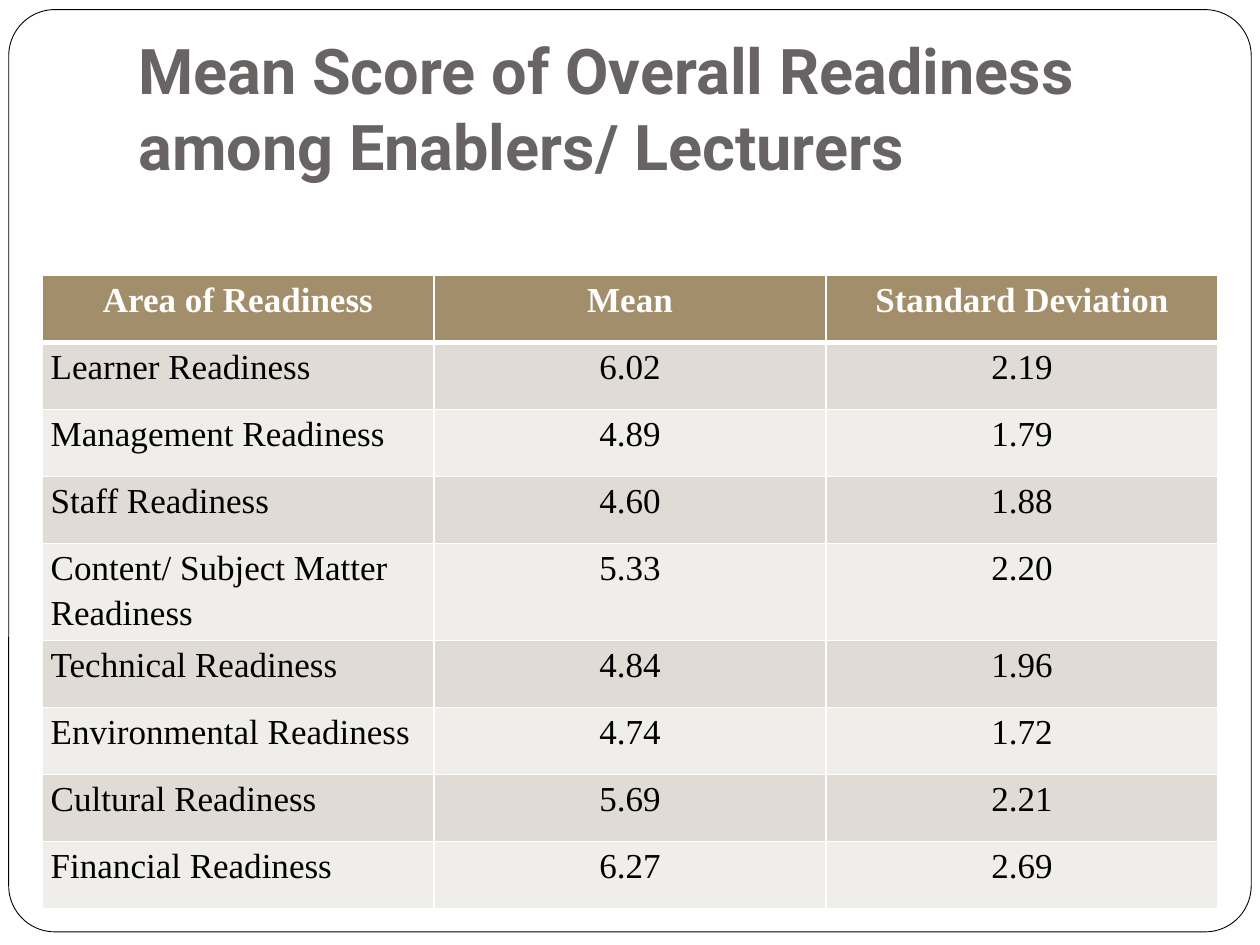
from lxml.etree import SubElement
from pptx import Presentation
from pptx.dml.color import RGBColor
from pptx.enum.shapes import MSO_SHAPE
from pptx.enum.text import MSO_ANCHOR, PP_ALIGN
from pptx.oxml.ns import qn
from pptx.util import Pt

TITLE = "Mean Score of Overall Readiness among Enablers/ Lecturers"
ROWS = [
    ("Area of Readiness", "Mean", "Standard Deviation"),
    ("Learner Readiness", "6.02", "2.19"),
    ("Management Readiness", "4.89", "1.79"),
    ("Staff Readiness", "4.60", "1.88"),
    ("Content/ Subject Matter Readiness", "5.33", "2.20"),
    ("Technical Readiness", "4.84", "1.96"),
    ("Environmental Readiness", "4.74", "1.72"),
    ("Cultural Readiness", "5.69", "2.21"),
    ("Financial Readiness", "6.27", "2.69"),
]
HEAD, BANDS = "A28E6A", ("F0EEEB", "E0DBD4")
COL, ROW, TALL, TALL_ROW = 224, 38.3, 52.8, 4
TITLE_FONT = {"name": "Roboto", "size": Pt(36), "bold": True}
CELL_FONT = {"name": "Times New Roman", "size": Pt(20)}
TITLE_BOX = {
    "word_wrap": True, "vertical_anchor": MSO_ANCHOR.BOTTOM,
    "margin_left": Pt(7.2), "margin_right": Pt(7.2),
    "margin_top": Pt(3.6), "margin_bottom": Pt(7.2),
}
CELL_BOX = {
    "margin_left": Pt(5), "margin_right": Pt(5),
    "margin_top": 0, "margin_bottom": 0,
}


def color(code):
    return RGBColor.from_string(code)


def apply(item, values):
    for name, value in values.items():
        setattr(item, name, value)


def paint(item, code):
    item.fill.solid()
    item.fill.fore_color.rgb = color(code)


def write(frame, text, font, code, **para):
    line = frame.paragraphs[0]
    apply(line, para)
    run = line.add_run()
    run.text = text
    apply(run.font, font)
    run.font.color.rgb = color(code)


def border(cell, top, bottom):
    props = cell._tc.get_or_add_tcPr()
    for side, width in (("L", 1), ("R", 1), ("T", top), ("B", bottom)):
        line = SubElement(props, qn(f"a:ln{side}"), w=str(Pt(width)))
        fill = SubElement(line, qn("a:solidFill"))
        SubElement(fill, qn("a:srgbClr"), val="FFFFFF")


def add_frame(slide):
    frame = slide.shapes.add_shape(
        MSO_SHAPE.ROUNDED_RECTANGLE, Pt(5), Pt(5.5), Pt(710), Pt(527))
    frame.adjustments[0] = 0.05
    frame.shadow.inherit = False
    paint(frame, "FFFFFF")
    frame.line.color.rgb = color("000000")
    frame.line.width = Pt(0.5)


def add_title(slide):
    box = slide.shapes.add_textbox(Pt(72), Pt(21.6), Pt(612), Pt(90))
    apply(box.text_frame, TITLE_BOX)
    write(box.text_frame, TITLE, TITLE_FONT, "696464")


def add_scores(slide):
    highs = [TALL if row == TALL_ROW else ROW for row in range(len(ROWS))]
    wide = len(ROWS[0])
    table = slide.shapes.add_table(
        len(ROWS), wide, Pt(24), Pt(157.5), Pt(COL * wide), Pt(sum(highs))).table
    for col in table.columns:
        col.width = Pt(COL)
    for row, (texts, high) in enumerate(zip(ROWS, highs)):
        table.rows[row].height = Pt(high)
        head = row == 0
        for col, text in enumerate(texts):
            cell = table.cell(row, col)
            border(cell, 3 if row == 1 else 1, 3 if head else 1)
            paint(cell, HEAD if head else BANDS[row % 2])
            apply(cell, CELL_BOX)
            left = col == 0 and not head
            write(cell.text_frame, text, {**CELL_FONT, "bold": head},
                  "FFFFFF" if head else "000000", line_spacing=1.15,
                  alignment=PP_ALIGN.LEFT if left else PP_ALIGN.CENTER)


def main():
    deck = Presentation()
    apply(deck, {"slide_width": Pt(720), "slide_height": Pt(540)})
    slide = deck.slides.add_slide(deck.slide_layouts[6])
    add_frame(slide)
    add_title(slide)
    add_scores(slide)
    deck.save("out.pptx")


if __name__ == "__main__":
    main()
